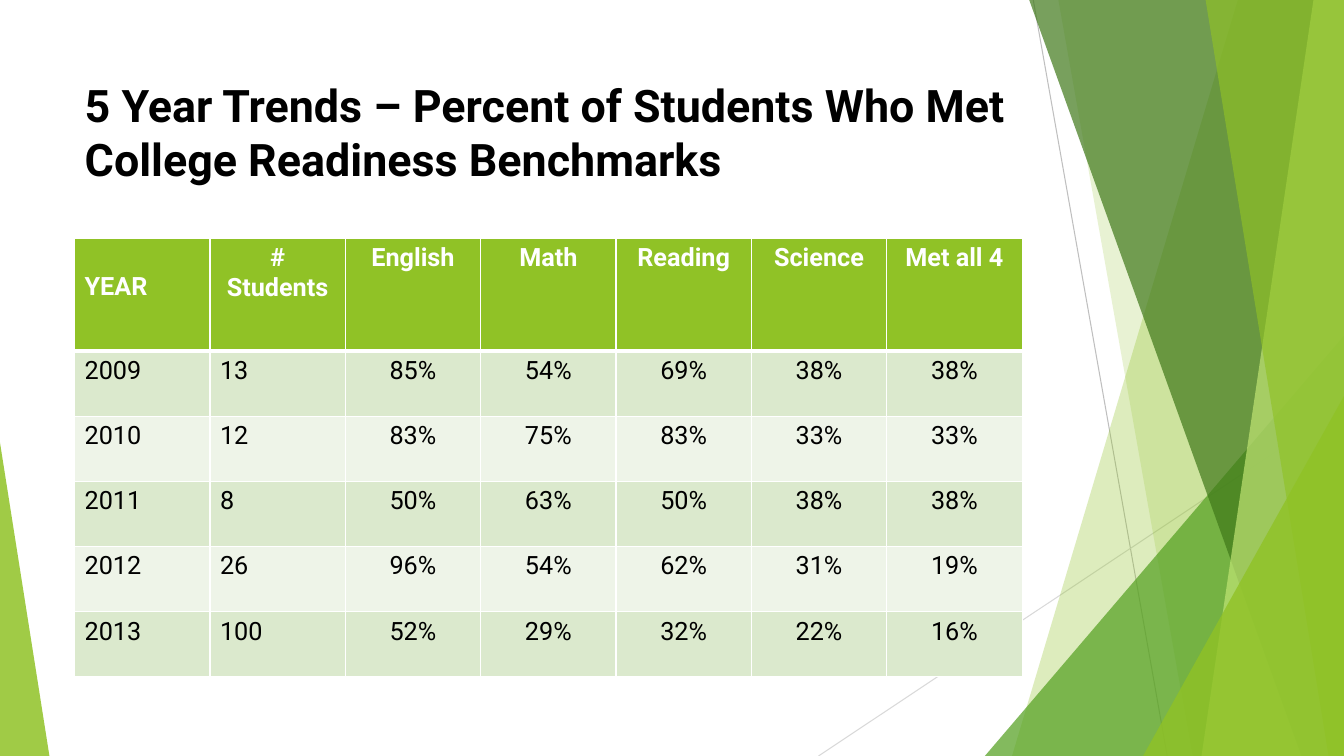
import lxml.etree
import pptx
import pptx.dml.color
import pptx.enum.shapes
import pptx.enum.text
import pptx.oxml.ns
import pptx.util

GREEN = "90C226"
WHITE = "FFFFFF"
BLACK = "000000"
BANDS = ["DBE9CD", "EEF4E8"]
TITLE = "5 Year Trends – Percent of Students Who Met College Readiness Benchmarks"
ROWS = [
    ["YEAR", "# Students", "English", "Math", "Reading", "Science", "Met all 4"],
    ["2009", "13", "85%", "54%", "69%", "38%", "38%"],
    ["2010", "12", "83%", "75%", "83%", "33%", "33%"],
    ["2011", "8", "50%", "63%", "50%", "38%", "38%"],
    ["2012", "26", "96%", "54%", "62%", "31%", "19%"],
    ["2013", "100", "52%", "29%", "32%", "22%", "16%"],
]
# Each facet: top left x, top right x, bottom right x, bottom left x, colour, opacity
FACETS_BACK = [
    (92.1, 100, 100, 75.3, GREEN, 30),
    (78.75, 100, 100, 88.73, GREEN, 20),
]
FACETS_FRONT = [
    (76.58, 100, 100, 96.83, "3F7819", 70),
    (97.73, 100, 100, 89.4, "C0E474", 70),
    (89.7, 100, 100, 98.85, GREEN, 65),
]


def rgb(code):
    return pptx.dml.color.RGBColor.from_string(code)


def node(parent, tag, **attrs):
    return lxml.etree.SubElement(parent, pptx.oxml.ns.qn(tag), **attrs)


class Deck:
    """Holds the style and the slide; lengths are percent of the slide's size."""

    font = "Roboto"

    def __init__(self):
        self.file = pptx.Presentation()
        self.file.slide_width = pptx.util.Inches(13.33)
        self.file.slide_height = pptx.util.Inches(7.5)
        self.slide = self.file.slides.add_slide(self.file.slide_layouts[5])
        self.shapes = self.slide.shapes

    def wide(self, share):
        return round(self.file.slide_width * share / 100)

    def high(self, share):
        return round(self.file.slide_height * share / 100)

    def box(self, left, top, width, height):
        return self.wide(left), self.high(top), self.wide(width), self.high(height)

    def text(self, para, words, size, color, bold=False):
        run = para.add_run()
        run.text = words
        run.font.name = self.font
        run.font.size = pptx.util.Pt(size)
        run.font.bold = bold
        run.font.color.rgb = rgb(color)

    def title(self, words, *place):
        shape = self.shapes.title
        shape.left, shape.top, shape.width, shape.height = self.box(*place)
        frame = shape.text_frame
        frame.word_wrap = True
        frame.auto_size = pptx.enum.text.MSO_AUTO_SIZE.NONE
        frame.vertical_anchor = pptx.enum.text.MSO_ANCHOR.TOP
        frame.margin_top = pptx.util.Inches(0.1)
        para = frame.paragraphs[0]
        para.alignment = pptx.enum.text.PP_ALIGN.LEFT
        self.text(para, words, 32, BLACK, True)

    def line(self, x1, y1, x2, y2, color):
        line = self.shapes.add_connector(
            pptx.enum.shapes.MSO_CONNECTOR.STRAIGHT,
            self.wide(x1), self.high(y1), self.wide(x2), self.high(y2))
        line.line.color.rgb = rgb(color)
        line.line.width = pptx.util.Pt(0.75)
        node(line._element.spPr, "a:effectLst")

    def paint(self, shape, color, alpha):
        shape.shadow.inherit = False
        shape.line.fill.background()
        shape.fill.solid()
        shape.fill.fore_color.rgb = rgb(color)
        tint = shape._element.spPr.find(".//" + pptx.oxml.ns.qn("a:srgbClr"))
        node(tint, "a:alpha", val=str(alpha * 1000))

    def facet(self, x1, x2, x3, x4, color, alpha):
        """Draw a four-sided pane as tall as the slide."""
        pen = self.shapes.build_freeform(self.wide(x1), 0)
        foot = self.high(100)
        pen.add_line_segments(
            [(self.wide(x2), 0), (self.wide(x3), foot), (self.wide(x4), foot)])
        self.paint(pen.convert_to_shape(), color, alpha)

    def wedge(self, left, top, width, apex, color, alpha):
        """Draw a triangle that stands on the slide's foot."""
        shape = self.shapes.add_shape(
            pptx.enum.shapes.MSO_SHAPE.ISOSCELES_TRIANGLE,
            *self.box(left, top, width, 100 - top))
        shape.adjustments[0] = apex
        self.paint(shape, color, alpha)

    def edge(self, cell, side, width):
        line = node(cell._tc.get_or_add_tcPr(), "a:ln" + side,
                    w=str(pptx.util.Pt(width)))
        node(node(line, "a:solidFill"), "a:srgbClr", val=WHITE)

    def cell(self, cell, words, row, col):
        head = row == 0
        for side in "LRTB":
            thick = (row, side) in [(0, "B"), (1, "T")]
            self.edge(cell, side, 3 if thick else 1)
        cell.fill.solid()
        cell.fill.fore_color.rgb = rgb(GREEN if head else BANDS[(row - 1) % 2])
        para = cell.text_frame.paragraphs[0]
        if col > 1 or (head and col == 1):
            para.alignment = pptx.enum.text.PP_ALIGN.CENTER
        if head and col == 0:
            cell.margin_top = pptx.util.Inches(0.34)
        self.text(para, words, 18, WHITE if head else BLACK, head)

    def table(self, rows, left, top, width, first, rest):
        """Draw rows in equal columns; first and rest are row heights."""
        count = len(rows[0])
        height = first + rest * (len(rows) - 1)
        table = self.shapes.add_table(
            len(rows), count, *self.box(left, top, width, height)).table
        table.first_row = table.horz_banding = False
        for col in table.columns:
            col.width = self.wide(width / count)
        for r, texts in enumerate(rows):
            table.rows[r].height = self.high(rest if r else first)
            for c, words in enumerate(texts):
                self.cell(table.cell(r, c), words, r, c)


def main():
    deck = Deck()
    deck.line(76.88, 0, 86.85, 100, "BFBFBF")
    deck.line(100, 53.73, 60.9, 100, "D9D9D9")
    for facet in FACETS_BACK:
        deck.facet(*facet)
    deck.wedge(73.28, 44.4, 26.72, 1, "54A021", 72)
    for facet in FACETS_FRONT:
        deck.facet(*facet)
    deck.wedge(85.05, 52.4, 14.95, 1, GREEN, 80)
    deck.wedge(0, 58.53, 3.68, 0, GREEN, 85)
    deck.title(TITLE, 5.55, 8.93, 70.5, 19.2)
    deck.table(ROWS, 5.55, 31.5, 70.5, 14.93, 8.62)
    deck.file.save("out.pptx")


if __name__ == "__main__":
    main()
